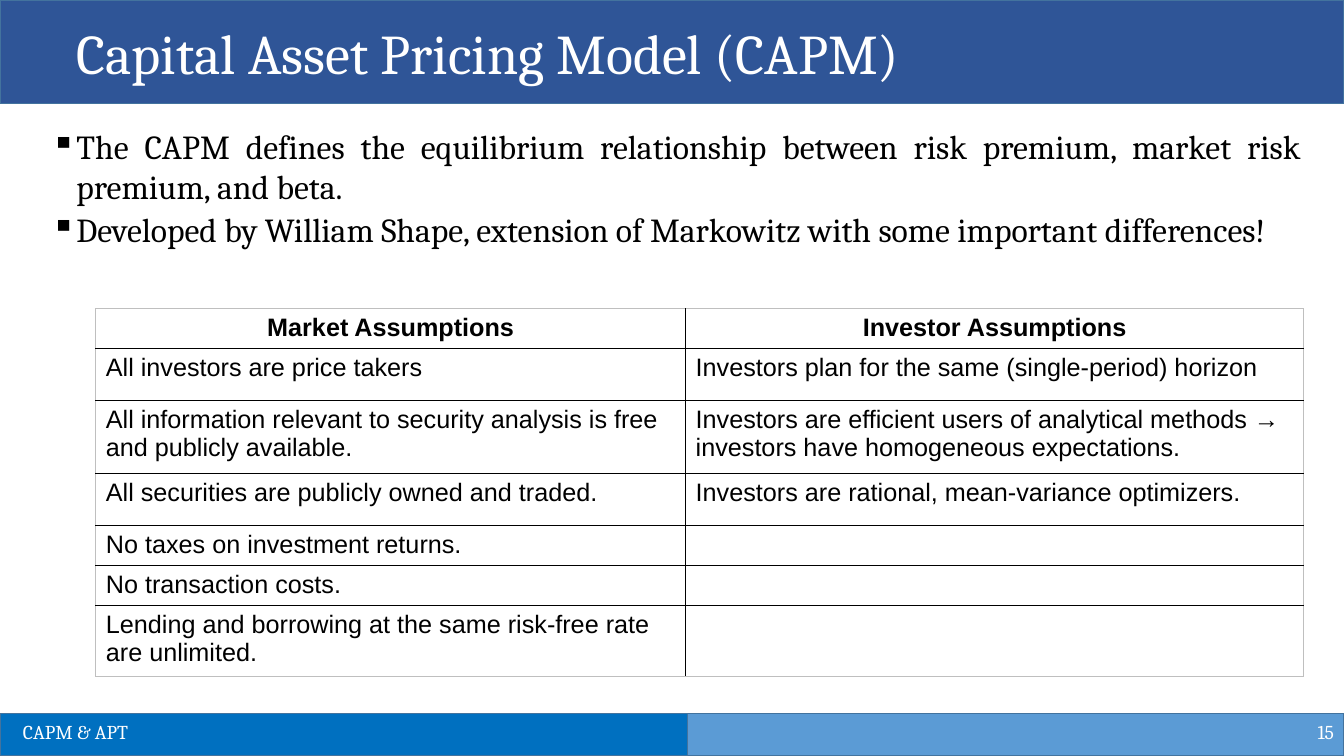
"""Build the slide on the Capital Asset Pricing Model and its assumptions."""
from lxml import etree
from pptx import Presentation
from pptx.dml.color import RGBColor
from pptx.enum import shapes, text
from pptx.oxml import ns
from pptx.util import Inches, Pt

WHITE = RGBColor(0xFF, 0xFF, 0xFF)
BLACK = RGBColor(0x00, 0x00, 0x00)
GREY = RGBColor(0xBF, 0xBF, 0xBF)
NAVY = RGBColor(0x2F, 0x55, 0x97)
BLUE = RGBColor(0x00, 0x70, 0xC0)
LIGHT_BLUE = RGBColor(0x5B, 0x9B, 0xD5)
OUTLINE = RGBColor(0x43, 0x73, 0x9E)


def write(paragraph, content, size=18, font="Cambria", color=BLACK, bold=False,
          align=text.PP_ALIGN.LEFT):
    paragraph.alignment = align
    run = paragraph.add_run()
    run.text = content
    run.font.size = Pt(size)
    run.font.name = font
    run.font.color.rgb = color
    run.font.bold = bold


def add_border(cell, index, side, color, width):
    line = etree.Element(ns.qn(f"a:{side}"), w=str(Pt(width)))
    fill = etree.SubElement(line, ns.qn("a:solidFill"))
    etree.SubElement(fill, ns.qn("a:srgbClr"), val=str(color))
    cell._tc.get_or_add_tcPr().insert(index, line)


presentation = Presentation()
presentation.slide_width = Inches(13.33)
presentation.slide_height = Inches(7.5)
slide = presentation.slides.add_slide(presentation.slide_layouts[6])

bars = [
    (0, 0, 13.33, 1.03, NAVY),
    (0, 7.08, 6.82, 0.42, BLUE),
    (6.82, 7.08, 6.51, 0.42, LIGHT_BLUE),
]
for left, top, width, height, color in bars:
    bar = slide.shapes.add_shape(shapes.MSO_SHAPE.RECTANGLE, Inches(left), Inches(top),
                                 Inches(width), Inches(height))
    bar.shadow.inherit = False
    bar.fill.solid()
    bar.fill.fore_color.rgb = color
    bar.line.color.rgb = OUTLINE
    bar.line.width = Pt(1)

labels = [
    ("Capital Asset Pricing Model (CAPM)", 0.66, 0.13, 12.08, 0.77, 40,
     text.PP_ALIGN.LEFT, text.MSO_ANCHOR.TOP),
    ("15", 10.33, 7.06, 3, 0.4, 14, text.PP_ALIGN.RIGHT, text.MSO_ANCHOR.MIDDLE),
    ("CAPM & APT", 0.13, 7.09, 5.54, 0.34, 14, text.PP_ALIGN.LEFT, text.MSO_ANCHOR.TOP),
]
for content, left, top, width, height, size, align, anchor in labels:
    frame = slide.shapes.add_textbox(Inches(left), Inches(top), Inches(width),
                                     Inches(height)).text_frame
    frame.word_wrap = True
    frame.vertical_anchor = anchor
    write(frame.paragraphs[0], content, size=size, color=WHITE, align=align)

bullets = [
    "The CAPM defines the equilibrium relationship between risk premium, market risk "
    "premium, and beta.",
    "Developed by William Shape, extension of Markowitz with some important differences!",
]
body = slide.shapes.add_textbox(Inches(0.41), Inches(1.2), Inches(12.59),
                                Inches(5.7)).text_frame
body.word_wrap = True
for index, content in enumerate(bullets):
    paragraph = body.add_paragraph() if index else body.paragraphs[0]
    write(paragraph, content, size=24, align=text.PP_ALIGN.JUSTIFY)
    paragraph.space_after = Pt(2)
    properties = paragraph._p.get_or_add_pPr()
    properties.set("marL", str(Inches(0.25)))
    properties.set("indent", str(Inches(-0.25)))
    etree.SubElement(properties, ns.qn("a:buChar"), char="▪")

assumptions = [
    ("Market Assumptions", "Investor Assumptions"),
    ("All investors are price takers",
     "Investors plan for the same (single-period) horizon"),
    ("All information relevant to security analysis is free and publicly available.",
     "Investors are efficient users of analytical methods → "
     "investors have homogeneous expectations."),
    ("All securities are publicly owned and traded.",
     "Investors are rational, mean-variance optimizers."),
    ("No taxes on investment returns.", ""),
    ("No transaction costs.", ""),
    ("Lending and borrowing at the same risk-free rate are unlimited.", ""),
]
column_widths = [5.85, 6.13]
row_heights = [0.4, 0.51, 0.73, 0.51, 0.4, 0.4, 0.7]
table = slide.shapes.add_table(len(row_heights), len(column_widths), Inches(0.95),
                               Inches(3.06), Inches(11.98), Inches(3.65)).table
table.first_row = False
table.horz_banding = False
for column, width in zip(table.columns, column_widths):
    column.width = Inches(width)
for row, height in zip(table.rows, row_heights):
    row.height = Inches(height)

for row_index, entries in enumerate(assumptions):
    header = row_index == 0
    for column_index, content in enumerate(entries):
        cell = table.cell(row_index, column_index)
        cell.fill.background()
        if content:
            write(cell.text_frame.paragraphs[0], content, font="Arial", bold=header,
                  align=text.PP_ALIGN.CENTER if header else text.PP_ALIGN.LEFT)
        outer_sides = {
            "lnL": column_index == 0,
            "lnR": column_index == len(column_widths) - 1,
            "lnT": header,
            "lnB": row_index == len(row_heights) - 1,
        }
        for index, (side, outer) in enumerate(outer_sides.items()):
            add_border(cell, index, side, GREY if outer else BLACK, 0.5 if outer else 1)

presentation.save("out.pptx")
